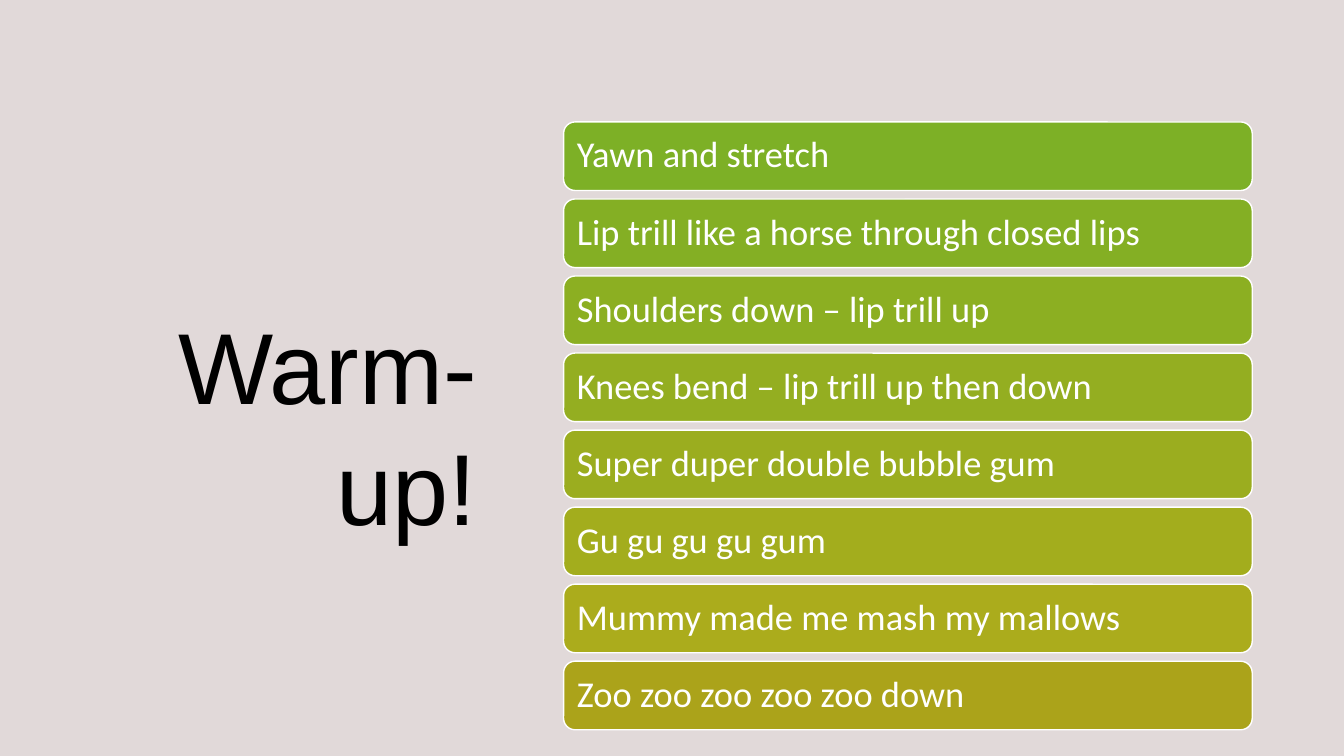
from dataclasses import dataclass
from pptx import Presentation
from pptx.dml.color import RGBColor
from pptx.enum.shapes import MSO_SHAPE
from pptx.enum.text import MSO_ANCHOR, PP_ALIGN
from pptx.util import Inches, Pt


@dataclass(frozen=True)
class Theme:
    back: RGBColor = RGBColor.from_string("E1D9D9")
    ink: RGBColor = RGBColor.from_string("000000")
    light: RGBColor = RGBColor.from_string("FFFFFF")
    head: Pt = Pt(72)
    body: Pt = Pt(26)


def add_run(para, text, font, size, color):
    run = para.add_run()
    run.text = text
    run.font.name = font
    run.font.size = size
    run.font.color.rgb = color


theme = Theme()
deck = Presentation()
deck.slide_width = Inches(13.33)
deck.slide_height = Inches(7.5)
slide = deck.slides.add_slide(deck.slide_layouts[5])
slide.background.fill.solid()
slide.background.fill.fore_color.rgb = theme.back

# Title on the left
title = slide.shapes.title
title.left, title.top = Inches(0.52), Inches(1.16)
title.width, title.height = Inches(4.31), Inches(6.11)
frame = title.text_frame
frame.word_wrap = True
frame.vertical_anchor = MSO_ANCHOR.MIDDLE
para = frame.paragraphs[0]
para.alignment = PP_ALIGN.RIGHT
add_run(para, "Warm-up!", "Arial", theme.head, theme.ink)

# Stack of exercises, shading from green to olive
steps = [
    ("Yawn and stretch", "7DB026"),
    ("Lip trill like a horse through closed lips", "84AF24"),
    ("Shoulders down – lip trill up", "8CAF22"),
    ("Knees bend – lip trill up then down", "94AE21"),
    ("Super duper double bubble gum", "9BAD1F"),
    ("Gu gu gu gu gum", "A3AD1D"),
    ("Mummy made me mash my mallows", "ABAC1C"),
    ("Zoo zoo zoo zoo zoo down", "ABA31A"),
]
first, last = 1.21, 6.56
pitch = (last - first) / (len(steps) - 1)
for row, (text, color) in enumerate(steps):
    bar = slide.shapes.add_shape(
        MSO_SHAPE.ROUNDED_RECTANGLE,
        Inches(5.59), Inches(first + row * pitch), Inches(6.83), Inches(0.68))
    bar.shadow.inherit = False
    bar.fill.solid()
    bar.fill.fore_color.rgb = RGBColor.from_string(color)
    bar.line.color.rgb = theme.light
    bar.line.width = Pt(1)
    frame = bar.text_frame
    frame.word_wrap = True
    frame.vertical_anchor = MSO_ANCHOR.MIDDLE
    frame.margin_left = frame.margin_right = Inches(0.1)
    frame.margin_top = frame.margin_bottom = Inches(0.1)
    para = frame.paragraphs[0]
    para.alignment = PP_ALIGN.LEFT
    para.line_spacing = 0.9
    add_run(para, text, "Calibri", theme.body, theme.light)

deck.save("out.pptx")
